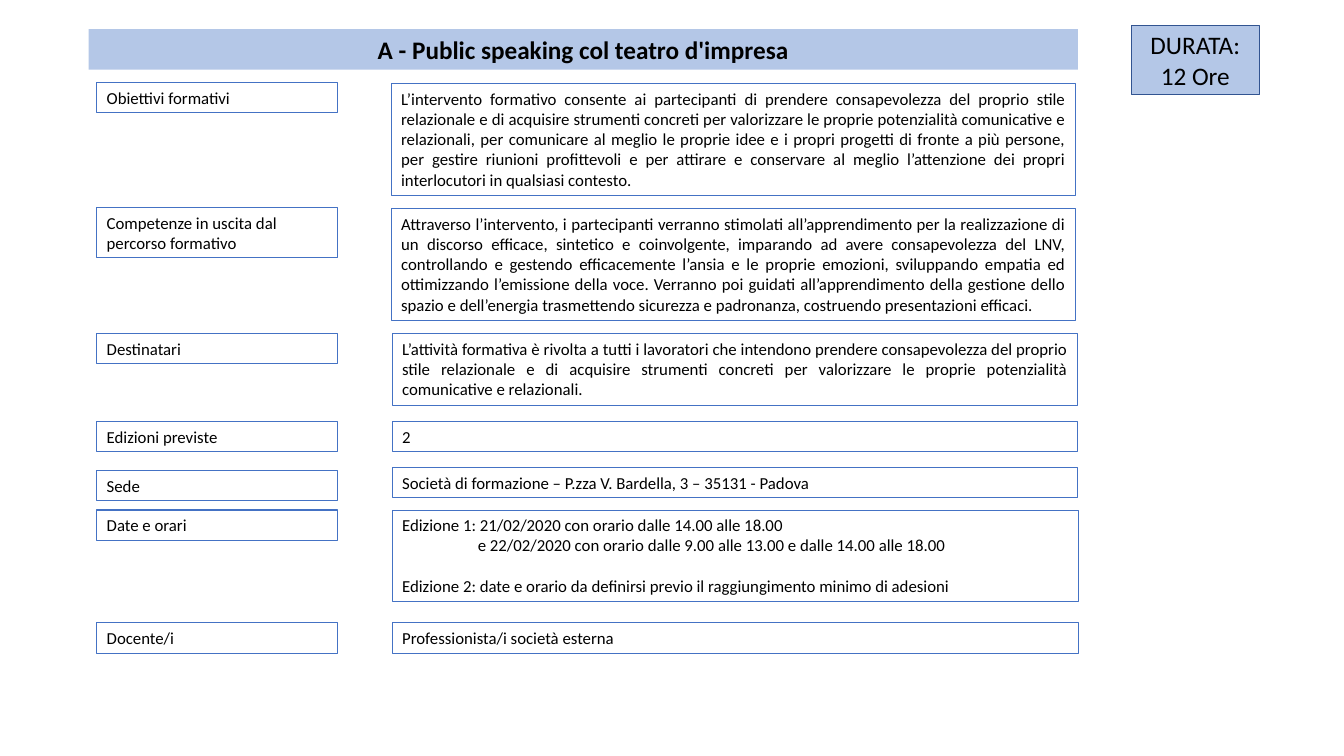
from dataclasses import dataclass

from pptx import Presentation
from pptx.dml.color import RGBColor
from pptx.enum.shapes import MSO_SHAPE
from pptx.enum.text import MSO_ANCHOR, MSO_AUTO_SIZE, PP_ALIGN
from pptx.util import Inches, Pt


@dataclass(frozen=True)
class Theme:
    font: str = "Calibri"
    heading_size: float = 18
    body_size: float = 12
    text: RGBColor = RGBColor(0x00, 0x00, 0x00)
    band: RGBColor = RGBColor(0xB4, 0xC7, 0xE7)
    border: RGBColor = RGBColor(0x44, 0x72, 0xC4)
    dark_border: RGBColor = RGBColor(0x32, 0x54, 0x91)


THEME = Theme()
LABEL_LEFT, LABEL_WIDTH = 0.96, 2.39

# Label, label top and height, then content box and alignment
ROWS = [
    ("Obiettivi formativi", 0.82, 0.3, (3.88, 0.83, 6.79, 1.11), PP_ALIGN.JUSTIFY,
     ["L’intervento formativo consente ai partecipanti di prendere consapevolezza del proprio "
      "stile relazionale e di acquisire strumenti concreti per valorizzare le proprie "
      "potenzialità comunicative e relazionali, per comunicare al meglio le proprie idee e i "
      "propri progetti di fronte a più persone, per gestire riunioni profittevoli e per attirare "
      "e conservare al meglio l’attenzione dei propri interlocutori in qualsiasi contesto."]),
    ("Competenze in uscita dal percorso formativo", 2.06, 0.5, (3.88, 2.07, 6.79, 1.11),
     PP_ALIGN.JUSTIFY,
     ["Attraverso l’intervento, i partecipanti verranno stimolati all’apprendimento per la "
      "realizzazione di un discorso efficace, sintetico e coinvolgente, imparando ad avere "
      "consapevolezza del LNV, controllando e gestendo efficacemente l’ansia e le proprie "
      "emozioni, sviluppando empatia ed ottimizzando l’emissione della voce. Verranno poi "
      "guidati all’apprendimento della gestione dello spazio e dell’energia trasmettendo "
      "sicurezza e padronanza, costruendo presentazioni efficaci."]),
    ("Destinatari", 3.31, 0.3, (3.89, 3.31, 6.8, 0.71), PP_ALIGN.JUSTIFY,
     ["L’attività formativa è rivolta a tutti i lavoratori che intendono prendere "
      "consapevolezza del proprio stile relazionale e di acquisire strumenti concreti per "
      "valorizzare le proprie potenzialità comunicative e relazionali."]),
    ("Edizioni previste", 4.18, 0.3, (3.89, 4.18, 6.8, 0.3), PP_ALIGN.JUSTIFY, ["2"]),
    ("Sede", 4.67, 0.3, (3.89, 4.64, 6.8, 0.3), PP_ALIGN.LEFT,
     ["Società di formazione – P.zza V. Bardella, 3 – 35131 - Padova"]),
    ("Date e orari", 5.06, 0.3, (3.89, 5.06, 6.81, 0.91), PP_ALIGN.LEFT,
     ["Edizione 1: 21/02/2020 con orario dalle 14.00 alle 18.00",
      "e 22/02/2020 con orario dalle 9.00 alle 13.00 e dalle 14.00 alle 18.00",
      "Edizione 2: date e orario da definirsi previo il raggiungimento minimo di adesioni"]),
    ("Docente/i", 6.18, 0.3, (3.89, 6.18, 6.81, 0.3), PP_ALIGN.LEFT,
     ["Professionista/i società esterna"]),
]


def write_text(shape, lines, size, alignment, anchor=MSO_ANCHOR.TOP, bold=False):
    frame = shape.text_frame
    frame.text = "\n".join(lines)
    frame.word_wrap = True
    frame.auto_size = MSO_AUTO_SIZE.NONE
    frame.vertical_anchor = anchor
    for paragraph in frame.paragraphs:
        paragraph.alignment = alignment
        paragraph.font.name = THEME.font
        paragraph.font.size = Pt(size)
        paragraph.font.bold = bold
        paragraph.font.color.rgb = THEME.text


def add_box(slide, box, border, border_width, fill=None):
    shape = slide.shapes.add_shape(MSO_SHAPE.RECTANGLE, *map(Inches, box))
    shape.shadow.inherit = False
    if fill is None:
        shape.fill.background()
    else:
        shape.fill.solid()
        shape.fill.fore_color.rgb = fill
    shape.line.color.rgb = border
    shape.line.width = Pt(border_width)
    return shape


def place_title(slide, box, text):
    title = slide.shapes.title
    title.left, title.top, title.width, title.height = map(Inches, box)
    title.fill.solid()
    title.fill.fore_color.rgb = THEME.band
    write_text(title, [text], THEME.heading_size, PP_ALIGN.CENTER, bold=True)


def add_duration(slide, box, lines):
    shape = add_box(slide, box, THEME.dark_border, 1, THEME.band)
    write_text(shape, lines, THEME.heading_size, PP_ALIGN.CENTER, MSO_ANCHOR.MIDDLE)


def add_field(slide, box, lines, alignment=PP_ALIGN.LEFT):
    shape = add_box(slide, box, THEME.border, 0.75)
    write_text(shape, lines, THEME.body_size, alignment)
    return shape


def format_schedule(shape):
    """Indent the second date and set the next edition apart."""
    _, second_date, second_edition = shape.text_frame.paragraphs
    second_date._p.get_or_add_pPr().set("marL", str(Inches(0.75)))
    second_edition.space_before = Pt(14.65)


def build_course_slide(presentation):
    slide = presentation.slides.add_slide(presentation.slide_layouts.get_by_name("Title Only"))

    # Heading and duration
    place_title(slide, (0.88, 0.29, 9.81, 0.4), "A - Public speaking col teatro d'impresa")
    add_duration(slide, (11.22, 0.25, 1.27, 0.69), ["DURATA:", "12 Ore"])

    # Course details
    for label, top, height, content_box, alignment, lines in ROWS:
        add_field(slide, (LABEL_LEFT, top, LABEL_WIDTH, height), [label])
        content = add_field(slide, content_box, lines, alignment)
        if label == "Date e orari":
            format_schedule(content)


def main():
    presentation = Presentation()
    presentation.slide_width = Inches(13.33)
    presentation.slide_height = Inches(7.5)
    build_course_slide(presentation)
    presentation.save("out.pptx")


if __name__ == "__main__":
    main()
